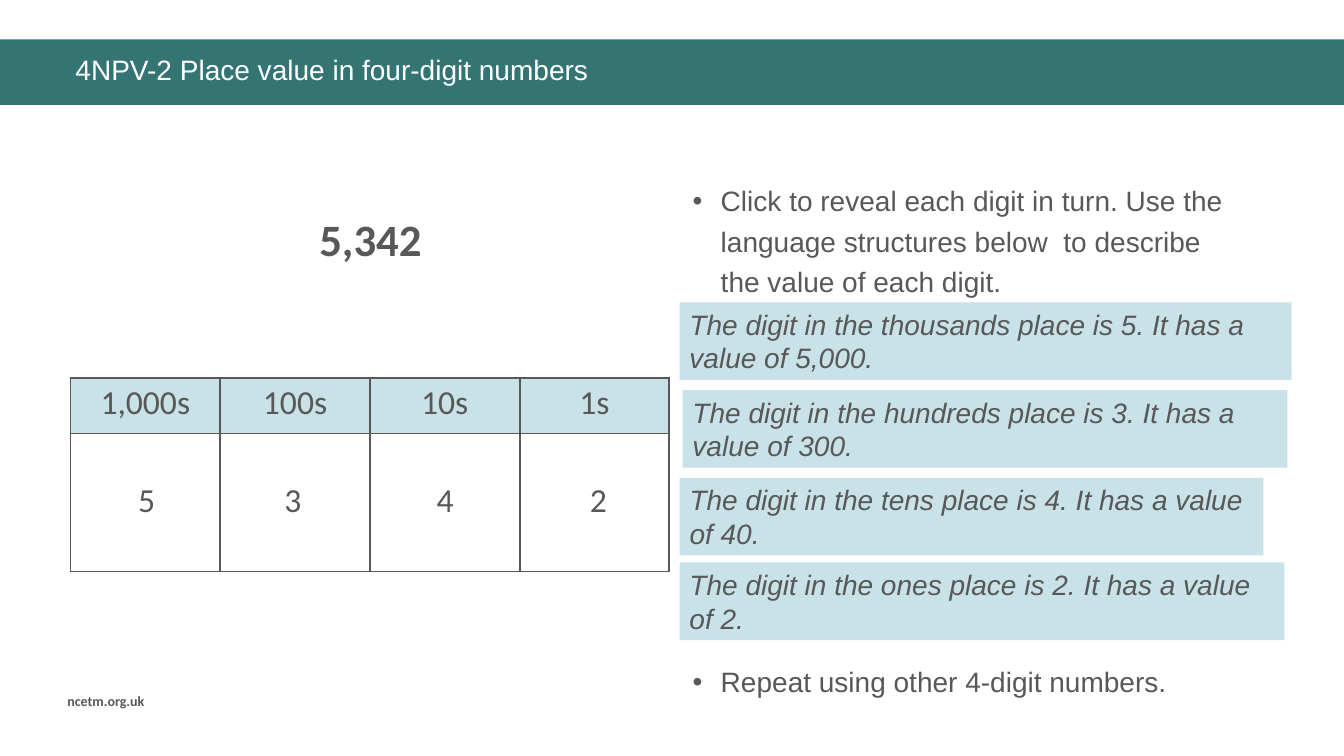
from lxml import etree
from pptx import Presentation
from pptx.dml.color import RGBColor
from pptx.enum.shapes import MSO_SHAPE
from pptx.enum.text import MSO_ANCHOR, PP_ALIGN
from pptx.oxml.ns import qn
from pptx.util import Inches, Pt

RECTANGLE = MSO_SHAPE.RECTANGLE
TOP = MSO_ANCHOR.TOP
LEFT, CENTER = PP_ALIGN.LEFT, PP_ALIGN.CENTER

TEAL, PALE_BLUE, GREY, WHITE = "347574", "C8E2E8", "585858", "FFFFFF"

PLACES = ["1,000s", "100s", "10s", "1s"]
DIGITS = [("5", 1.17), ("3", 2.62), ("4", 4.13), ("2", 5.65)]
SENTENCES = [
    ("The digit in the thousands place is 5. It has a value of 5,000.", 6.74, 3, 6.07),
    ("The digit in the hundreds place is 3. It has a value of 300.", 6.77, 3.87, 6),
    ("The digit in the tens place is 4. It has a value of 40.", 6.74, 4.74, 5.79),
    ("The digit in the ones place is 2. It has a value of 2.", 6.74, 5.58, 6),
]


def rgb(value):
    return RGBColor.from_string(value)


def box(left, top, width, height):
    return [Inches(length) for length in (left, top, width, height)]


def write(frame, text, size, font="Arial", color=GREY, align=LEFT, bold=False, italic=False):
    frame.word_wrap = True
    frame.vertical_anchor = TOP
    paragraph = frame.paragraphs[0]
    paragraph.text = text
    paragraph.alignment = align
    paragraph.font.size = Pt(size)
    paragraph.font.name = font
    paragraph.font.color.rgb = rgb(color)
    paragraph.font.bold = bold
    paragraph.font.italic = italic
    return paragraph


def add_text(slide, place, text, size, **style):
    return write(slide.shapes.add_textbox(*place).text_frame, text, size, **style)


def add_panel(slide, place, color):
    panel = slide.shapes.add_shape(RECTANGLE, *place)
    panel.shadow.inherit = False
    panel.fill.solid()
    panel.fill.fore_color.rgb = rgb(color)
    panel.line.fill.background()
    return panel


def add_header(slide, place):
    left, top, width, height = place
    add_panel(slide, place, TEAL)
    title_place = left + Inches(0.65), top + Inches(0.12), width - Inches(1.01), Inches(0.47)
    title = add_text(slide, title_place, "4NPV-2 Place value in four-digit numbers", 20, color=WHITE)
    title.line_spacing = 0.9


def add_borders(cell):
    properties = cell._tc.get_or_add_tcPr()
    for index, side in enumerate(("lnL", "lnR", "lnT", "lnB")):
        border = etree.Element(qn(f"a:{side}"), w=str(Pt(1.5)))
        fill = etree.SubElement(border, qn("a:solidFill"))
        etree.SubElement(fill, qn("a:srgbClr"), val=GREY)
        properties.insert(index, border)


def add_place_value_chart(slide, place):
    left, top, width, height = place
    chart = slide.shapes.add_table(2, len(PLACES), *place).table
    chart.rows[0].height = Inches(0.55)
    chart.rows[1].height = height - Inches(0.55)
    for column, heading in enumerate(PLACES):
        chart.columns[column].width = width // len(PLACES)
        for row, color in enumerate((PALE_BLUE, WHITE)):
            cell = chart.cell(row, column)
            cell.fill.solid()
            cell.fill.fore_color.rgb = rgb(color)
            add_borders(cell)
        write(chart.cell(0, column).text_frame, heading, 24, font="Calibri", align=CENTER)
    for digit, digit_left in DIGITS:
        digit_place = Inches(digit_left), top + Inches(0.95), Inches(0.57), Inches(0.5)
        add_text(slide, digit_place, digit, 24, font="Calibri", align=CENTER)


def add_bullet(slide, place, text):
    instruction = add_text(slide, place, text, 20)
    properties = instruction._p.get_or_add_pPr()
    properties.set("marL", str(Inches(0.28)))
    properties.set("indent", str(Inches(-0.28)))
    color = etree.SubElement(properties, qn("a:buClr"))
    etree.SubElement(color, qn("a:srgbClr"), val=GREY)
    etree.SubElement(properties, qn("a:buFont"), typeface="Arial")
    etree.SubElement(properties, qn("a:buChar"), char="•")
    for run_defaults in properties.findall(qn("a:defRPr")):
        properties.append(run_defaults)
    instruction.line_spacing = 1.2


def add_instructions(slide, place):
    left, top, width, height = place
    add_bullet(slide, (left, top, width, Inches(1.3)),
               "Click to reveal each digit in turn. Use the language structures below  "
               "to describe the value of each digit.")
    add_bullet(slide, (left, top + height - Inches(0.5), width, Inches(0.5)),
               "Repeat using other 4-digit numbers.")
    for sentence, sentence_left, sentence_top, sentence_width in SENTENCES:
        panel = add_panel(slide, box(sentence_left, sentence_top, sentence_width, 0.77), PALE_BLUE)
        write(panel.text_frame, sentence, 20, italic=True)


def main():
    presentation = Presentation()
    presentation.slide_width = Inches(13.33)
    presentation.slide_height = Inches(7.5)
    slide = presentation.slides.add_slide(presentation.slide_layouts[6])
    add_header(slide, box(0, 0.39, 13.33, 0.65))
    add_text(slide, box(0.57, 6.82, 1.21, 0.27), "ncetm.org.uk", 10, font="Calibri", bold=True)
    add_text(slide, box(2.08, 2.05, 3.19, 0.64), "5,342", 32, font="Calibri",
             align=CENTER, bold=True)
    add_place_value_chart(slide, box(0.7, 3.75, 5.94, 1.92))
    add_instructions(slide, box(6.77, 1.71, 5.62, 5.27))
    presentation.save("out.pptx")


if __name__ == "__main__":
    main()
